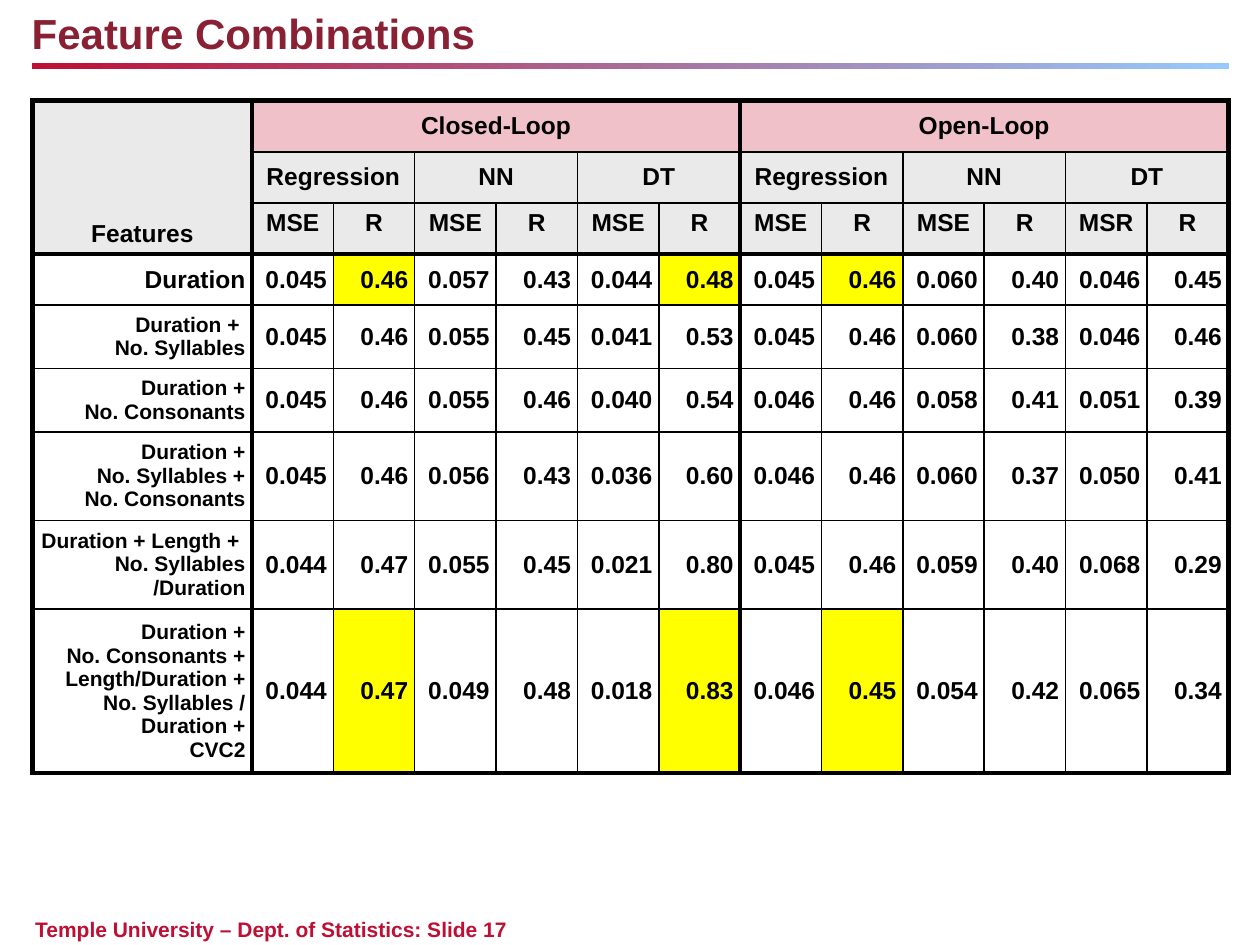
import dataclasses
import typing

import lxml.etree
import pptx
import pptx.dml.color
import pptx.enum.shapes
import pptx.enum.text
import pptx.oxml.ns
import pptx.util

Cm = pptx.util.Cm
Pt = pptx.util.Pt
ALIGN = pptx.enum.text.PP_ALIGN
ANCHOR = pptx.enum.text.MSO_ANCHOR


@dataclasses.dataclass(frozen=True)
class Theme:
    font: str = "Arial"
    title: str = "892034"
    accent: str = "BE0F34"
    sky: str = "95CAFF"
    ink: str = "000000"
    header: str = "EAEAEA"
    loop: str = "F1C1CA"
    highlight: str = "FFFF00"
    title_size: int = 24
    text_size: int = 14
    small_size: int = 12
    thin: int = 1
    thick: int = 3


@dataclasses.dataclass(frozen=True)
class CellSpec:
    """One cell, or a merged block of rows by columns."""
    row: int
    column: int
    text: str
    rows: int = 1
    columns: int = 1
    fill: typing.Optional[str] = None
    size: int = 14
    align: typing.Any = ALIGN.CENTER
    anchor: typing.Any = ANCHOR.MIDDLE
    margin: typing.Optional[float] = None


THEME = Theme()
NO_STYLE = "{2D5ABB26-0587-4C30-8999-92F81FD0307C}"
LABEL_WIDTH, VALUE_WIDTH = 4.42, 1.64
ROW_HEIGHTS = [1.03] * 4 + [1.27] * 2 + [1.77] * 2 + [3.31]
HEADER_ROWS = 3
METHODS = ("Regression", "NN", "DT")
LOOPS = ("Closed-Loop", "Open-Loop")
MEASURES = ["MSE", "R"] * 5 + ["MSR", "R"]
THICK_ROW_EDGES = {0, HEADER_ROWS, len(ROW_HEIGHTS)}
THICK_COLUMN_EDGES = {0, 1, 7, 13}
HIGHLIGHTED_ROWS = {3, 8}
HIGHLIGHTED_COLUMNS = {2, 6, 8}
RESULTS = [
    ("Duration",
     "0.045 0.46 0.057 0.43 0.044 0.48 0.045 0.46 0.060 0.40 0.046 0.45"),
    ("Duration + \vNo. Syllables",
     "0.045 0.46 0.055 0.45 0.041 0.53 0.045 0.46 0.060 0.38 0.046 0.46"),
    ("Duration +\vNo. Consonants",
     "0.045 0.46 0.055 0.46 0.040 0.54 0.046 0.46 0.058 0.41 0.051 0.39"),
    ("Duration +\vNo. Syllables +\vNo. Consonants",
     "0.045 0.46 0.056 0.43 0.036 0.60 0.046 0.46 0.060 0.37 0.050 0.41"),
    ("Duration + Length + \vNo. Syllables /Duration",
     "0.044 0.47 0.055 0.45 0.021 0.80 0.045 0.46 0.059 0.40 0.068 0.29"),
    ("Duration +\vNo. Consonants + Length/Duration + No. Syllables / Duration +\vCVC2",
     "0.044 0.47 0.049 0.48 0.018 0.83 0.046 0.45 0.054 0.42 0.065 0.34"),
]


def rgb(color: str) -> pptx.dml.color.RGBColor:
    return pptx.dml.color.RGBColor.from_string(color)


def set_font(paragraph, size: int, color: str) -> None:
    font = paragraph.font
    font.name, font.size, font.bold = THEME.font, Pt(size), True
    font.color.rgb = rgb(color)


def add_text(slide, text: str, left: float, top: float, width: float,
             height: float, size: int, color: str) -> None:
    box = slide.shapes.add_textbox(Cm(left), Cm(top), Cm(width), Cm(height))
    frame = box.text_frame
    frame.word_wrap = True
    frame.auto_size = pptx.enum.text.MSO_AUTO_SIZE.SHAPE_TO_FIT_TEXT
    frame.margin_left = frame.margin_right = frame.margin_top = frame.margin_bottom = 0
    frame.text = text
    set_font(frame.paragraphs[0], size, color)


def add_rule(slide) -> None:
    """Draw the gradient bar under the title."""
    bar = slide.shapes.add_shape(pptx.enum.shapes.MSO_SHAPE.RECTANGLE,
                                 Cm(0.64), Cm(1.27), Cm(24.13), Cm(0.13))
    bar.shadow.inherit = False
    bar.line.fill.background()
    bar.fill.gradient()
    bar.fill.gradient_angle = 0
    for stop, color in zip(bar.fill.gradient_stops, (THEME.accent, THEME.sky)):
        stop.color.rgb = rgb(color)


def add_border(cell, side: str, width: int) -> None:
    qn = pptx.oxml.ns.qn
    properties = cell._tc.get_or_add_tcPr()
    line = lxml.etree.SubElement(properties, qn(f"a:ln{side}"), w=str(Pt(width)))
    fill = lxml.etree.SubElement(line, qn("a:solidFill"))
    lxml.etree.SubElement(fill, qn("a:srgbClr"), val=THEME.ink)


def add_borders(table, spec: CellSpec) -> None:
    """Outline a block; its first cell carries all four sides."""
    bottom, right = spec.row + spec.rows, spec.column + spec.columns

    def weight(edge: int, thick_edges: set) -> int:
        return THEME.thick if edge in thick_edges else THEME.thin

    for row in range(spec.row, bottom):
        for column in range(spec.column, right):
            first = (row, column) == (spec.row, spec.column)
            sides = (
                ("L", column == spec.column, weight(spec.column, THICK_COLUMN_EDGES)),
                ("R", column + 1 == right, weight(right, THICK_COLUMN_EDGES)),
                ("T", row == spec.row, weight(spec.row, THICK_ROW_EDGES)),
                ("B", row + 1 == bottom, weight(bottom, THICK_ROW_EDGES)),
            )
            for side, outer, width in sides:
                if outer or first:
                    add_border(table.cell(row, column), side, width)


def fill_cell(table, spec: CellSpec) -> None:
    cell = table.cell(spec.row, spec.column)
    if spec.rows * spec.columns > 1:
        cell.merge(table.cell(spec.row + spec.rows - 1, spec.column + spec.columns - 1))
    add_borders(table, spec)
    if spec.fill:
        cell.fill.solid()
        cell.fill.fore_color.rgb = rgb(spec.fill)
    else:
        cell.fill.background()
    cell.vertical_anchor = spec.anchor
    if spec.margin is not None:
        cell.margin_left = cell.margin_right = Cm(spec.margin)
        cell.margin_top = cell.margin_bottom = Cm(spec.margin)
    cell.text_frame.text = spec.text
    paragraph = cell.text_frame.paragraphs[0]
    paragraph.alignment = spec.align
    set_font(paragraph, spec.size, THEME.ink)


def header_cells() -> typing.Iterator[CellSpec]:
    yield CellSpec(0, 0, "Features", rows=HEADER_ROWS, fill=THEME.header,
                   anchor=ANCHOR.BOTTOM)
    for index, loop in enumerate(LOOPS):
        yield CellSpec(0, 1 + 6 * index, loop, columns=6, fill=THEME.loop)
    for index, method in enumerate(METHODS * len(LOOPS)):
        yield CellSpec(1, 1 + 2 * index, method, columns=2, fill=THEME.header)
    for column, measure in enumerate(MEASURES, start=1):
        yield CellSpec(2, column, measure, fill=THEME.header, anchor=ANCHOR.TOP)


def result_cells() -> typing.Iterator[CellSpec]:
    for row, (label, values) in enumerate(RESULTS, start=HEADER_ROWS):
        for column, text in enumerate([label] + values.split()):
            small = column == 0 and row > HEADER_ROWS
            highlighted = row in HIGHLIGHTED_ROWS and column in HIGHLIGHTED_COLUMNS
            yield CellSpec(row, column, text, align=ALIGN.RIGHT, margin=0.13,
                           size=THEME.small_size if small else THEME.text_size,
                           fill=THEME.highlight if highlighted else None)


def add_results_table(slide) -> None:
    widths = [LABEL_WIDTH] + [VALUE_WIDTH] * len(MEASURES)
    frame = slide.shapes.add_table(len(ROW_HEIGHTS), len(widths), Cm(0.66), Cm(2.03),
                                   Cm(sum(widths)), Cm(sum(ROW_HEIGHTS)))
    table = frame.table
    table.first_row = table.horz_banding = False
    table._tbl.tblPr.find(pptx.oxml.ns.qn("a:tableStyleId")).text = NO_STYLE
    for column, width in zip(table.columns, widths):
        column.width = Cm(width)
    for row, height in zip(table.rows, ROW_HEIGHTS):
        row.height = Cm(height)
    for spec in [*header_cells(), *result_cells()]:
        fill_cell(table, spec)


def main() -> None:
    presentation = pptx.Presentation()
    presentation.slide_width, presentation.slide_height = Cm(25.4), Cm(19.05)
    slide = presentation.slides.add_slide(presentation.slide_layouts[6])
    add_rule(slide)
    add_text(slide, "Temple University – Dept. of Statistics: Slide 17",
             0.71, 18.47, 22.66, 0.51, THEME.small_size, THEME.accent)
    add_text(slide, "Feature Combinations",
             0.64, 0.15, 24.08, 1.02, THEME.title_size, THEME.title)
    add_results_table(slide)
    presentation.save("out.pptx")


if __name__ == "__main__":
    main()
